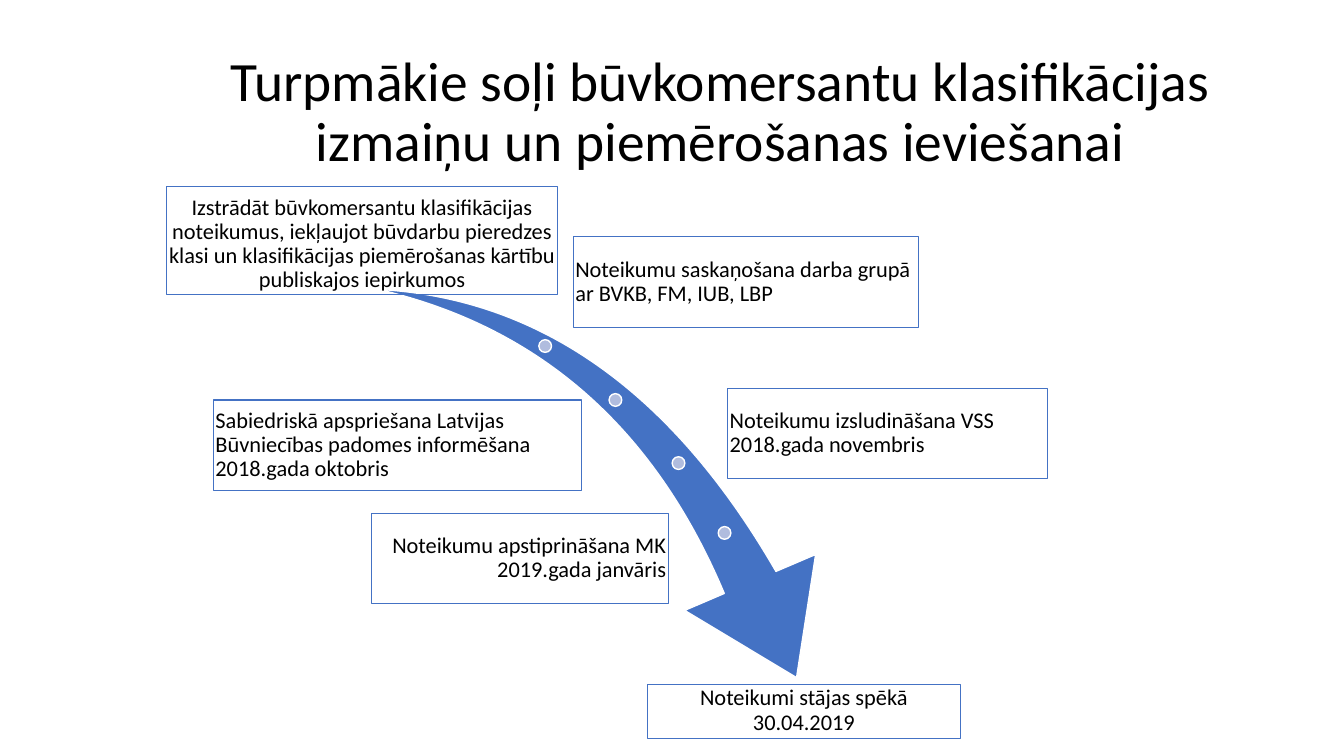
from dataclasses import dataclass

from pptx import Presentation
from pptx.dml.color import RGBColor
from pptx.enum.shapes import MSO_SHAPE
from pptx.enum.text import MSO_ANCHOR, MSO_AUTO_SIZE, PP_ALIGN
from pptx.shapes.autoshape import Shape
from pptx.slide import Slide
from pptx.text.text import TextFrame
from pptx.util import Cm, Pt

RECTANGLE, OVAL, SWOOSH = MSO_SHAPE.RECTANGLE, MSO_SHAPE.OVAL, MSO_SHAPE.SWOOSH_ARROW
LEFT, CENTER, RIGHT = PP_ALIGN.LEFT, PP_ALIGN.CENTER, PP_ALIGN.RIGHT
TOP, MIDDLE, BOTTOM = MSO_ANCHOR.TOP, MSO_ANCHOR.MIDDLE, MSO_ANCHOR.BOTTOM
NO_AUTOFIT = MSO_AUTO_SIZE.NONE


@dataclass(frozen=True)
class Theme:
    font: str = "Calibri"
    title_size: float = 39.6
    step_size: float = 16
    text: RGBColor = RGBColor(0x00, 0x00, 0x00)
    accent: RGBColor = RGBColor(0x44, 0x72, 0xC4)
    milestone: RGBColor = RGBColor(0xB0, 0xBC, 0xDE)
    outline: RGBColor = RGBColor(0xFF, 0xFF, 0xFF)


@dataclass(frozen=True)
class Step:
    """One boxed step; lengths are in centimetres."""
    text: str
    left: float
    top: float
    width: float
    height: float = 2.29
    align: PP_ALIGN = LEFT
    anchor: MSO_ANCHOR = MIDDLE


@dataclass(frozen=True)
class Milestone:
    left: float
    top: float


THEME = Theme()
MILESTONE_SIZE = 0.32
STEP_INSET = Cm(0.05)
TITLE = "Turpmākie soļi būvkomersantu klasifikācijas izmaiņu un piemērošanas ieviešanai"

MILESTONES = (
    Milestone(13.58, 8.56),
    Milestone(15.35, 9.92),
    Milestone(16.94, 11.51),
    Milestone(18.1, 13.27),
)

STEPS = (
    Step("Izstrādāt būvkomersantu klasifikācijas noteikumus, iekļaujot būvdarbu "
         "pieredzes klasi un klasifikācijas piemērošanas kārtību publiskajos iepirkumos",
         4.19, 4.7, 9.87, 2.72, CENTER, BOTTOM),
    Step("Noteikumu saskaņošana darba grupā ar BVKB, FM, IUB, LBP", 14.45, 5.97, 8.69),
    Step("Sabiedriskā apspriešana Latvijas Būvniecības padomes informēšana "
         "2018.gada oktobris", 5.38, 10.08, 9.27),
    Step("Noteikumu izsludināšana VSS 2018.gada novembris", 18.34, 9.78, 8.05),
    Step("Noteikumu apstiprināšana MK 2019.gada janvāris", 9.37, 12.93, 7.47, align=RIGHT),
    Step("Noteikumi stājas spēkā 30.04.2019", 16.31, 17.25, 7.9, 1.37, CENTER, TOP),
)


def write_text(frame: TextFrame, text: str, size: float,
               align: PP_ALIGN, anchor: MSO_ANCHOR) -> None:
    frame.word_wrap = True
    frame.auto_size = NO_AUTOFIT
    frame.vertical_anchor = anchor
    paragraph = frame.paragraphs[0]
    paragraph.alignment = align
    paragraph.line_spacing = 0.9
    run = paragraph.add_run()
    run.text = text
    run.font.name = THEME.font
    run.font.size = Pt(size)
    run.font.color.rgb = THEME.text


def add_title(slide: Slide) -> None:
    title = slide.shapes.title
    title.left, title.top, title.width, title.height = Cm(4.75), Cm(1.02), Cm(26.8), Cm(3.68)
    write_text(title.text_frame, TITLE, THEME.title_size, CENTER, MIDDLE)


def add_filled_shape(slide: Slide, kind: MSO_SHAPE, left: float, top: float,
                     width: float, height: float, color: RGBColor) -> Shape:
    """Add a shape with the white outline shared by arrow and milestones."""
    shape = slide.shapes.add_shape(kind, Cm(left), Cm(top), Cm(width), Cm(height))
    shape.shadow.inherit = False
    shape.fill.solid()
    shape.fill.fore_color.rgb = color
    shape.line.color.rgb = THEME.outline
    shape.line.width = Pt(1)
    return shape


def add_arrow(slide: Slide) -> None:
    arrow = add_filled_shape(slide, SWOOSH, 9.25, 7.67, 12.4, 8.64, THEME.accent)
    arrow.rotation = 73.3
    arrow.adjustments[0] = 0.163
    arrow.adjustments[1] = 0.314


def add_step(slide: Slide, step: Step) -> None:
    box = slide.shapes.add_shape(RECTANGLE, Cm(step.left), Cm(step.top),
                                 Cm(step.width), Cm(step.height))
    box.shadow.inherit = False
    box.fill.background()
    box.line.color.rgb = THEME.accent
    box.line.width = Pt(0.75)
    frame = box.text_frame
    frame.margin_left = frame.margin_right = STEP_INSET
    frame.margin_top = frame.margin_bottom = STEP_INSET
    write_text(frame, step.text, THEME.step_size, step.align, step.anchor)


def main() -> None:
    presentation = Presentation()
    presentation.slide_width, presentation.slide_height = Cm(33.87), Cm(19.05)
    title_only = presentation.slide_layouts[5]
    slide = presentation.slides.add_slide(title_only)
    add_title(slide)
    add_arrow(slide)
    for milestone in MILESTONES:
        add_filled_shape(slide, OVAL, milestone.left, milestone.top,
                         MILESTONE_SIZE, MILESTONE_SIZE, THEME.milestone)
    for step in STEPS:
        add_step(slide, step)
    presentation.save("out.pptx")


if __name__ == "__main__":
    main()
